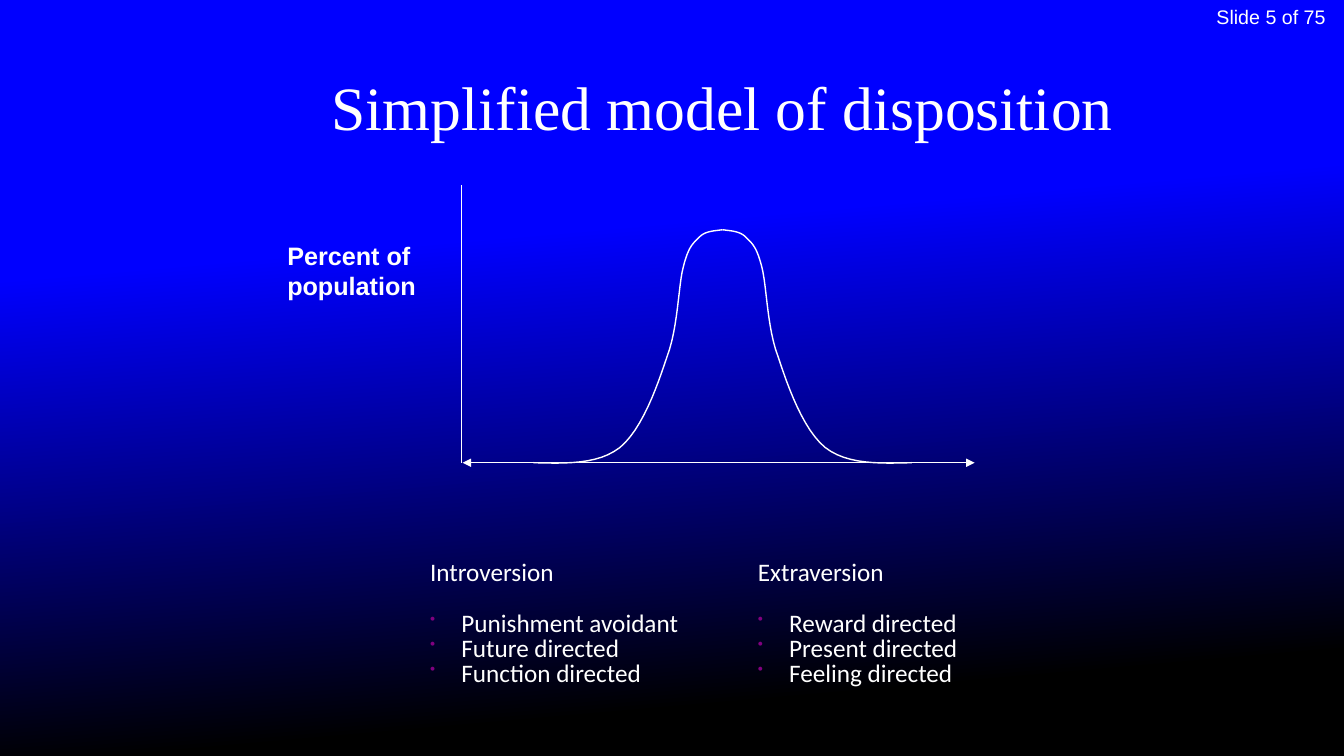
from lxml.etree import SubElement
from pptx import Presentation
from pptx.dml.color import RGBColor
from pptx.enum.shapes import MSO_CONNECTOR
from pptx.enum.text import MSO_ANCHOR, PP_ALIGN
from pptx.oxml.ns import qn
from pptx.util import Cm, Pt


def tint(code):
    return RGBColor.from_string(code)


def bezier(start, curves, steps=12):
    """Points along a chain of cubic curves, each given as three (x, y) pairs."""
    points = [start]
    for a, b, end in curves:
        for n in range(1, steps + 1):
            t = n / steps
            u = 1 - t
            points.append(tuple(
                u**3 * p + 3 * u * u * t * q + 3 * u * t * t * r + t**3 * s
                for p, q, r, s in zip(start, a, b, end)))
        start = end
    return points


class Board:
    ink = "FFFFFF"
    dot = "800080"
    thin = Pt(1)

    def __init__(self, deck):
        self.slide = deck.slides.add_slide(deck.slide_layouts[6])
        self.shapes = self.slide.shapes

    def backdrop(self, stops, angle):
        fill = self.slide.background.fill
        fill.gradient()
        fill.gradient_angle = angle
        for stop, (place, code) in zip(fill.gradient_stops, stops):
            stop.position = place
            stop.color.rgb = tint(code)

    def frame(self, box, anchor=MSO_ANCHOR.TOP):
        frame = self.shapes.add_textbox(*map(Cm, box)).text_frame
        frame.word_wrap = True
        frame.vertical_anchor = anchor
        return frame

    def style(self, para, font, size, bold=False):
        para.font.name = font
        para.font.size = Pt(size)
        para.font.bold = bold
        para.font.color.rgb = tint(self.ink)

    def text(self, box, words, font, size, bold=False,
             align=PP_ALIGN.LEFT, anchor=MSO_ANCHOR.TOP):
        frame = self.frame(box, anchor)
        frame.text = words
        for para in frame.paragraphs:
            para.alignment = align
            self.style(para, font, size, bold)

    def bullet(self, para):
        props = para._p.get_or_add_pPr()
        props.set("marL", str(Cm(0.79)))
        props.set("indent", str(-Cm(0.79)))
        color = SubElement(props, qn("a:buClr"))
        SubElement(color, qn("a:srgbClr"), val=self.dot)
        SubElement(props, qn("a:buSzPct"), val="60000")
        SubElement(props, qn("a:buChar"), char="•")

    def traits(self, box, head, items):
        """A heading with a bulleted list set one line below it."""
        frame = self.frame(box, MSO_ANCHOR.BOTTOM)
        frame.text = "\n".join([head, *items])
        for n, para in enumerate(frame.paragraphs):
            para.line_spacing = 0.6
            para.space_before = Pt(23.2 if n == 1 else 5)
            if n:
                self.bullet(para)
            self.style(para, "Calibri", 18)

    def group(self):
        return self.shapes.add_group_shape().shapes

    def axis(self, group, start, end, arrows=False):
        line = group.add_connector(
            MSO_CONNECTOR.STRAIGHT, *map(Cm, start + end))
        line.line.color.rgb = tint(self.ink)
        line.line.width = self.thin
        if arrows:
            stroke = line.line._get_or_add_ln()
            for tip in ("a:headEnd", "a:tailEnd"):
                SubElement(stroke, qn(tip), type="triangle")
        SubElement(line._element.spPr, qn("a:effectLst"))

    def curve(self, group, points):
        spots = [(Cm(x), Cm(y)) for x, y in points]
        pen = group.build_freeform(*spots[0])
        pen.add_line_segments(spots[1:], close=False)
        shape = pen.convert_to_shape()
        shape.shadow.inherit = False
        shape.fill.background()
        shape.line.color.rgb = tint(self.ink)
        shape.line.width = self.thin


def main():
    deck = Presentation()
    deck.slide_width, deck.slide_height = Cm(33.87), Cm(19.05)
    board = Board(deck)
    board.backdrop([(0.32, "0000FF"), (0.88, "000000")], 275)

    board.text((28.02, 0, 5.64, 0.86), "Slide 5 of 75", "Arial", 14,
               align=PP_ALIGN.RIGHT)
    board.text((7.42, 1.07, 21.59, 3.18), "Simplified model of disposition",
               "Times New Roman", 44, align=PP_ALIGN.CENTER,
               anchor=MSO_ANCHOR.MIDDLE)
    board.text((6.99, 5.92, 3.99, 1.78), "Percent of\npopulation",
               "Arial", 18, bold=True)

    graph = board.group()
    base, peak = 11.66, 18.21
    board.axis(graph, (11.66, base), (24.56, base), arrows=True)
    board.axis(graph, (11.63, base), (11.63, 4.65))
    rise = bezier((13.44, base), [
        ((14.25, 11.68), (15.06, 11.71), (15.62, 11.28)),
        ((16.18, 10.82), (16.56, 9.75), (16.81, 8.99)),
        ((17.09, 8.26), (17.09, 7.24), (17.22, 6.73)),
        ((17.35, 6.22), (17.45, 6.15), (17.63, 5.97)),
        ((17.78, 5.82), (18.01, 5.82), (peak, 5.79)),
    ])
    board.curve(graph, rise)
    board.curve(graph, [(2 * peak - x, y) for x, y in rise])

    board.traits((10.59, 13.94, 6.99, 3.48), "Introversion",
                 ["Punishment avoidant", "Future directed",
                  "Function directed"])
    board.traits((18.85, 13.94, 5.74, 3.48), "Extraversion",
                 ["Reward directed", "Present directed", "Feeling directed"])
    deck.save("out.pptx")


if __name__ == "__main__":
    main()
